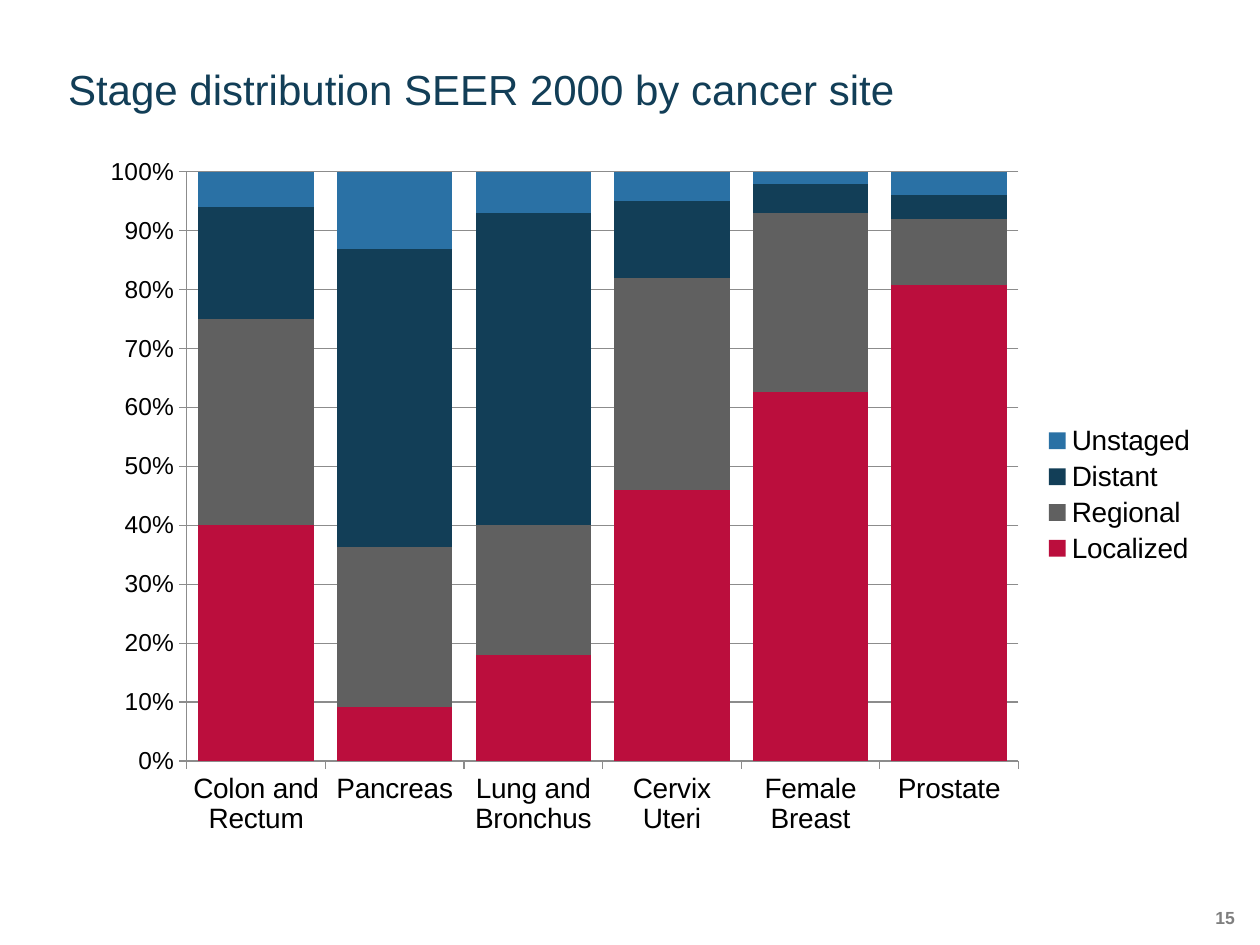
from dataclasses import dataclass

from lxml import etree
from pptx import Presentation
from pptx import util as u
from pptx.chart.data import CategoryChartData
from pptx.dml.color import RGBColor
from pptx.enum import chart as c
from pptx.enum import text as t
from pptx.oxml.ns import qn


@dataclass(frozen=True)
class Theme:
    font: str = "Arial"
    navy: str = "123E57"
    crimson: str = "BB0E3D"
    gray: str = "606060"
    blue: str = "2A71A5"
    black: str = "000000"
    grid: str = "8C8C8C"
    page: str = "7F7F7F"
    title_size: int = 24
    label_size: int = 16
    value_size: int = 14
    page_size: int = 10


@dataclass(frozen=True)
class Box:
    left: float
    top: float
    width: float
    height: float

    def lengths(self) -> list:
        return [u.Inches(n) for n in (self.left, self.top, self.width, self.height)]


@dataclass(frozen=True)
class Stage:
    name: str
    shares: tuple
    color: str


THEME = Theme()
TITLE_BOX = Box(0.54, 0.45, 8.93, 0.46)
CHART_BOX = Box(0.68, 1.14, 8.92, 5.57)
PAGE_BOX = Box(9.46, 7.2, 0.34, 0.2)
PLOT_AREA = Box(0.09, 0.04, 0.74, 0.84)  # fractions of the chart

SITES = ("Colon and Rectum", "Pancreas", "Lung and Bronchus",
         "Cervix Uteri", "Female Breast", "Prostate")
STAGES = (
    Stage("Localized", (40, 9, 18, 46, 62, 80), THEME.crimson),
    Stage("Regional", (35, 27, 22, 36, 30, 11), THEME.gray),
    Stage("Distant", (19, 50, 53, 13, 5, 4), THEME.navy),
    Stage("Unstaged", (6, 13, 7, 5, 2, 4), THEME.blue),
)


def style_font(font, size: int, color: str, bold: bool = False) -> None:
    font.name = THEME.font
    font.size = u.Pt(size)
    font.bold = bold
    font.color.rgb = RGBColor.from_string(color)


def style_line(line) -> None:
    line.width = u.Pt(0.75)
    line.color.rgb = RGBColor.from_string(THEME.grid)


def write_line(shape, words: str, size: int, color: str, align, anchor,
               spacing: float, bold: bool = False) -> None:
    frame = shape.text_frame
    frame.margin_left = frame.margin_right = 0
    frame.margin_top = frame.margin_bottom = 0
    frame.word_wrap = True
    frame.auto_size = t.MSO_AUTO_SIZE.NONE
    frame.vertical_anchor = anchor
    paragraph = frame.paragraphs[0]
    paragraph.alignment = align
    paragraph.line_spacing = spacing
    run = paragraph.add_run()
    run.text = words
    style_font(run.font, size, color, bold)


def place_plot(chart, area: Box) -> None:
    """Fix the inner plot area at fractions of the chart."""
    plot_area = chart._chartSpace.chart.plotArea
    for old in plot_area.findall(qn("c:layout")):
        plot_area.remove(old)
    layout = etree.Element(qn("c:layout"))
    manual = etree.SubElement(layout, qn("c:manualLayout"))
    settings = (("layoutTarget", "inner"), ("xMode", "edge"), ("yMode", "edge"),
                ("x", area.left), ("y", area.top),
                ("w", area.width), ("h", area.height))
    for name, value in settings:
        etree.SubElement(manual, qn(f"c:{name}")).set("val", str(value))
    plot_area.insert(0, layout)


def add_stage_chart(slide) -> None:
    data = CategoryChartData()
    data.categories = SITES
    for stage in STAGES:
        data.add_series(stage.name, stage.shares)
    chart = slide.shapes.add_chart(
        c.XL_CHART_TYPE.COLUMN_STACKED_100, *CHART_BOX.lengths(), data).chart
    chart.has_title = False
    style_font(chart.font, THEME.page_size, THEME.gray)
    place_plot(chart, PLOT_AREA)

    # Stacked columns
    plot = chart.plots[0]
    plot.gap_width = 20
    plot.overlap = 100
    plot.vary_by_categories = False
    for series, stage in zip(plot.series, STAGES):
        series.format.fill.solid()
        series.format.fill.fore_color.rgb = RGBColor.from_string(stage.color)

    # Axes and grid
    for axis, size in ((chart.category_axis, THEME.label_size),
                       (chart.value_axis, THEME.value_size)):
        axis.major_tick_mark = c.XL_TICK_MARK.OUTSIDE
        axis.minor_tick_mark = c.XL_TICK_MARK.NONE
        style_font(axis.tick_labels.font, size, THEME.black)
        style_line(axis.format.line)
    values = chart.value_axis
    values.minimum_scale, values.maximum_scale, values.major_unit = 0, 1, 0.1
    values.tick_labels.number_format = "0%"
    values.tick_labels.number_format_is_linked = False
    values.has_major_gridlines = True
    style_line(values.major_gridlines.format.line)

    # Legend
    chart.has_legend = True
    chart.legend.position = c.XL_LEGEND_POSITION.RIGHT
    chart.legend.include_in_layout = False
    style_font(chart.legend.font, THEME.label_size, THEME.black)


def main() -> None:
    presentation = Presentation()
    presentation.slide_width = u.Inches(10)
    presentation.slide_height = u.Inches(7.5)
    slide = presentation.slides.add_slide(presentation.slide_layouts[5])

    # Title
    title = slide.shapes.title
    title.left, title.top, title.width, title.height = TITLE_BOX.lengths()
    write_line(title, "Stage distribution SEER 2000 by cancer site",
               THEME.title_size, THEME.navy, t.PP_ALIGN.LEFT,
               t.MSO_ANCHOR.BOTTOM, 0.9)

    add_stage_chart(slide)

    # Page number
    page = slide.shapes.add_textbox(*PAGE_BOX.lengths())
    write_line(page, "15", THEME.page_size, THEME.page, t.PP_ALIGN.RIGHT,
               t.MSO_ANCHOR.TOP, 1.01, bold=True)

    presentation.save("out.pptx")


if __name__ == "__main__":
    main()
